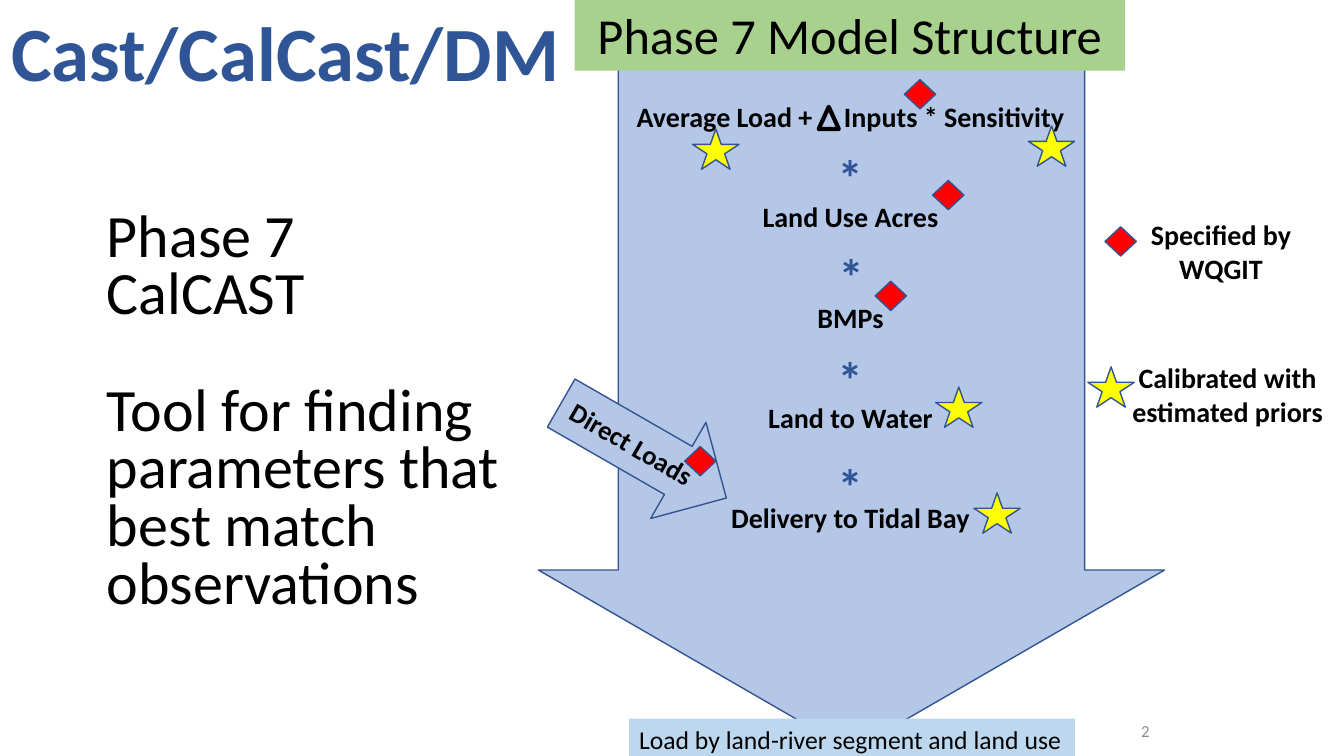
from lxml.etree import SubElement
from pptx import Presentation
from pptx.dml.color import RGBColor
from pptx.enum.shapes import MSO_SHAPE as SHAPE
from pptx.enum.text import MSO_ANCHOR as ANCHOR, MSO_AUTO_SIZE as FIT, PP_ALIGN as ALIGN
from pptx.oxml.ns import qn
from pptx.util import Pt

PX = 9144  # 100 px to the inch

# Content
TITLE = "Cast/CalCast/DM"
BODY = ["Phase 7", "CalCAST", "Tool for finding parameters that best match observations"]
HEAD = "Phase 7 Model Structure"
FACTORS = ["Average Load + Inputs * Sensitivity", "Land Use Acres", "BMPs",
           "Land to Water", "Delivery to Tidal Bay"]
DIRECT = "Direct Loads"
FOOTER = "Load by land-river segment and land use"
NUMBER = "2"
LEGEND = [("Specified by WQGIT", (1127, 211, 168, 77)),
          ("Calibrated with estimated priors", (1088, 353, 259, 77))]
TIMES = [(821, 140), (822, 238), (821, 340), (821, 447)]
DIAMONDS = [(897, 79), (925, 179), (868, 279), (679, 443), (1096, 225)]
STARS = [(1079, 364), (928, 384), (966, 489), (687, 128), (1020, 125)]

BLACK, NAVY, EDGE, PALE = "000000", "2F5597", "325491", "B4C7E7"
PITCH, LINE = 72, 24.4  # points from one factor to the next, and one text line


def color(code):
    return RGBColor.from_string(code)


def place(item, at):
    item.left, item.top, item.width, item.height = [n * PX for n in at]


def write(item, lines, size, tint=BLACK, bold=False, align=ALIGN.LEFT, anchor=ANCHOR.TOP):
    frame = item.text_frame
    frame.text = "\n".join(lines)
    frame.auto_size = FIT.NONE
    frame.word_wrap = True
    frame.vertical_anchor = anchor
    frame.margin_left, frame.margin_top, frame.margin_bottom = 10 * PX, 5 * PX, 5 * PX
    frame.margin_right = 0 if align == ALIGN.LEFT else 10 * PX
    for para in frame.paragraphs:
        para.alignment = align
        for run in para.runs:
            font = run.font
            font.name, font.size, font.bold = "Calibri", Pt(size), bold
            font.color.rgb = color(tint)
    return frame


def draw(kind, at, fill=None, line=None, width=1):
    item = slide.shapes.add_shape(kind, *[n * PX for n in at])
    item.shadow.inherit = False
    if fill:
        item.fill.solid()
        item.fill.fore_color.rgb = color(fill)
    else:
        item.fill.background()
    if line:
        item.line.color.rgb = color(line)
        item.line.width = Pt(width)
    else:
        item.line.fill.background()
    return item


def label(at, lines, size, **style):
    item = slide.shapes.add_textbox(*[n * PX for n in at])
    return write(item, lines, size, **style)


deck = Presentation()
deck.slide_width, deck.slide_height = 1333 * PX, 750 * PX
slide = deck.slides.add_slide(deck.slide_layouts[1])

# Title and body
title, body = slide.shapes.title, slide.placeholders[1]
place(title, (1, 0, 569, 102))
write(title, [TITLE], 54.8, tint=NAVY, bold=True)
place(body, (96, 200, 496, 420))
text = write(body, BODY, 42.9, anchor=ANCHOR.MIDDLE)
for para in text.paragraphs:
    para.line_spacing = 0.8
    para.space_before = Pt(0)
    props = para._p.get_or_add_pPr()
    props.set("marL", "0")
    props.set("indent", "0")
    SubElement(props, qn("a:buNone"))
text.paragraphs[-1].space_before = Pt(42)

# Main arrow, slide number and side arrow
arrow = draw(SHAPE.DOWN_ARROW, (534, 0, 621, 745), PALE, EDGE)
arrow.adjustments[0], arrow.adjustments[1] = 0.745, 0.289
label((925, 705, 225, 40), [NUMBER], 12, tint="8C8C8C", align=ALIGN.RIGHT, anchor=ANCHOR.MIDDLE)
side = draw(SHAPE.RIGHT_ARROW, (544, 392, 189, 110), PALE, EDGE)
side.rotation = 29.9
write(side, [DIRECT], 19.1, bold=True, align=ALIGN.CENTER, anchor=ANCHOR.MIDDLE).word_wrap = False

# Factors, with room for the delta in the first one
text = label((619, 94, 449, 481), FACTORS, 20, bold=True, align=ALIGN.CENTER)
for para in text.paragraphs:
    para.space_after = Pt(PITCH - LINE)
first = text.paragraphs[0]
start, end = FACTORS[0].split(" Inputs")
first.runs[0].text = start
for part in (" ", "Inputs" + end):
    run = first.add_run()
    run.text = part
    run.font.name, run.font.size, run.font.bold = "Calibri", Pt(20), True
    run.font.color.rgb = color(BLACK)
first.runs[1]._r.get_or_add_rPr().set("spc", "1800")
draw(SHAPE.ISOSCELES_TRIANGLE, (812, 106, 20, 22), line=BLACK, width=3)
for x, y in TIMES:
    label((x, y, 45, 71), ["*"], 36, tint=NAVY, bold=True)

# Bands at the top and the bottom
band = draw(SHAPE.RECTANGLE, (624, 713, 442, 41), "BDD7EE")
write(band, [FOOTER], 18.3)
band = draw(SHAPE.RECTANGLE, (570, -1, 546, 71), "A9D18E")
write(band, [HEAD], 36, align=ALIGN.CENTER, anchor=ANCHOR.MIDDLE)

# Legend and markers
for words, at in LEGEND:
    label(at, [words], 20, bold=True, align=ALIGN.CENTER)
for kind, spots, size, fill in [(SHAPE.DIAMOND, DIAMONDS, (31, 29), "FF0000"),
                                (SHAPE.STAR_5_POINT, STARS, (46, 40), "FFFF00")]:
    for spot in spots:
        draw(kind, spot + size, fill, EDGE)

deck.save("out.pptx")
